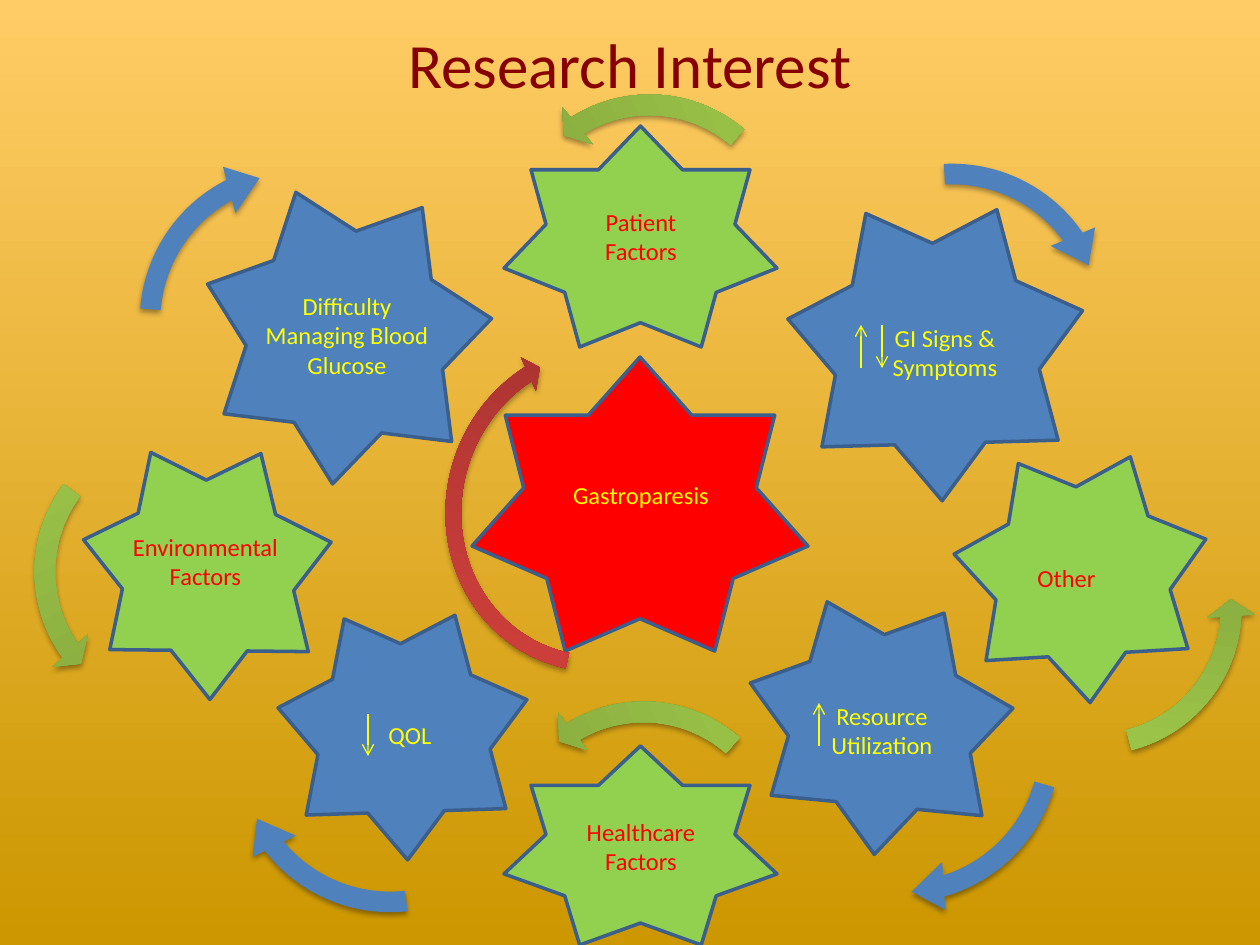
from copy import deepcopy

from lxml import etree
from pptx import Presentation
from pptx.dml.color import RGBColor
from pptx.enum.shapes import MSO_CONNECTOR as Conn, MSO_SHAPE as Kind
from pptx.enum.text import MSO_ANCHOR as Anchor, PP_ALIGN as Align
from pptx.oxml.ns import qn
from pptx.util import Pt

PX = 914400 / 126
BLUE, GREEN, RED, YELLOW = "4F81BD", "92D050", "FF0000", "FFFF00"
LEAF = ["779737", "9BC348", "9DC746"]
BRICK = ["9C2F2D", "CB3E3A", "CE3B37"]


def px(*nums):
    return [round(n * PX) for n in nums]


rgb = RGBColor.from_string

prs = Presentation()
prs.slide_width, prs.slide_height = px(1260, 945)
slide = prs.slides.add_slide(prs.slide_layouts[6])
shapes = slide.shapes

back = slide.background.fill
back.gradient()
back.gradient_angle = 270
for stop, tone in zip(back.gradient_stops, ["FFCC66", "CC9700"]):
    stop.color.rgb = rgb(tone)

# Stars: left, top, width, height, turn, fill
stars = [
    (786, 197, 294, 290, 332.4, BLUE),
    (472, 357, 336, 294, 0, RED),
    (202, 184, 284, 287, 340.4, BLUE),
    (276, 605, 249, 243, 332.4, BLUE),
    (750, 597, 267, 244, 29.8, BLUE),
    (504, 746, 273, 199, 0, GREEN),
    (504, 126, 273, 221, 0, GREEN),
    (82, 440, 246, 248, 334.1, GREEN),
    (951, 451, 249, 246, 279.3, GREEN),
]
for *box, turn, tone in stars:
    star = shapes.add_shape(Kind.STAR_7_POINT, *px(*box))
    star.rotation = turn
    star.shadow.inherit = False
    star.fill.solid()
    star.fill.fore_color.rgb = rgb(tone)
    star.line.color.rgb = rgb("3A5F8C")
    star.line.width = Pt(2)

# Labels: words, left, top, width, height, size, colour
labels = [
    ("Research Interest", 63, 21, 1134, 84, 36, "860000"),
    ("Gastroparesis", 536, 473, 210, 43, 14, YELLOW),
    ("GI Signs & Symptoms", 840, 316, 210, 72, 14, YELLOW),
    ("Difficulty Managing Blood Glucose", 242, 284, 210, 102, 14, YELLOW),
    ("QOL", 305, 713, 210, 43, 14, YELLOW),
    ("Resource Utilization", 777, 694, 210, 72, 14, YELLOW),
    ("Healthcare Factors", 557, 810, 168, 72, 14, RED),
    ("Other", 977, 556, 179, 43, 14, RED),
    ("Patient Factors", 557, 200, 168, 72, 14, RED),
    ("Environmental Factors", 116, 525, 179, 72, 14, RED),
]
for words, *box, size, tone in labels:
    frame = shapes.add_textbox(*px(*box)).text_frame
    frame.word_wrap = True
    frame.vertical_anchor = Anchor.MIDDLE
    frame.text = words
    para = frame.paragraphs[0]
    para.alignment = Align.CENTER
    font = para.runs[0].font
    font.name = "Calibri"
    font.size = Pt(size)
    font.color.rgb = rgb(tone)

# Up and down marks: x, start, end
for x, start, end in [(861, 368, 325), (882, 325, 368),
                      (368, 714, 756), (819, 746, 703)]:
    mark = shapes.add_connector(Conn.STRAIGHT, *px(x, start, x, end))
    mark.line.color.rgb = rgb(YELLOW)
    mark.line.width = Pt(0.75)
    etree.SubElement(mark.line._get_or_add_ln(), qn("a:tailEnd"), type="arrow")
    etree.SubElement(mark._element.spPr, qn("a:effectLst"))

# Curved arrows: kind, adjustments, width, height, fill, then left, top, turn
LEFT, RIGHT = Kind.LEFT_CIRCULAR_ARROW, Kind.CIRCULAR_ARROW
curves = [
    (LEFT, [0.065, 4.3, 104.891, 148.378, 0.075], 319, 319, LEAF,
     [(21, 412, 329.5), (936, 449, 188.4), (484, 688, 63.9), (490, 81, 63.1)]),
    (RIGHT, [0.047, 2.99, 25.236, 158.454, 0.055], 333, 352, BRICK,
     [(436, 331, 198.8)]),
    (RIGHT, [0.06, 7.586, 133.138, 98.498, 0.07], 344, 344, BLUE,
     [(126, 149, 20.4), (780, 150, 102.9), (218, 582, 279.5),
      (730, 572, 211.7)]),
]
for kind, bends, wide, high, paint, spots in curves:
    for left, top, turn in spots:
        curve = shapes.add_shape(kind, *px(left, top, wide, high))
        curve.rotation = turn
        for i, bend in enumerate(bends):
            curve.adjustments[i] = bend
        curve.line.fill.background()
        props = curve._element.spPr
        if paint == BLUE:
            curve.fill.solid()
            curve.fill.fore_color.rgb = rgb(paint)
        else:
            curve.fill.gradient()
            curve.fill.gradient_angle = 90
            stops = props.find(".//" + qn("a:gsLst"))
            stops.append(deepcopy(stops[-1]))
            for stop, tone, pos in zip(curve.fill.gradient_stops, paint,
                                       [0, 0.8, 1]):
                stop.color.rgb = rgb(tone)
                stop.position = pos
        effects = etree.SubElement(props, qn("a:effectLst"))
        shade = etree.SubElement(
            effects, qn("a:outerShdw"), blurRad=str(Pt(3.1)),
            dist=str(Pt(1.8)), dir="5400000", rotWithShape="0")
        black = etree.SubElement(shade, qn("a:srgbClr"), val="000000")
        etree.SubElement(black, qn("a:alpha"), val="35000")

prs.save("out.pptx")
